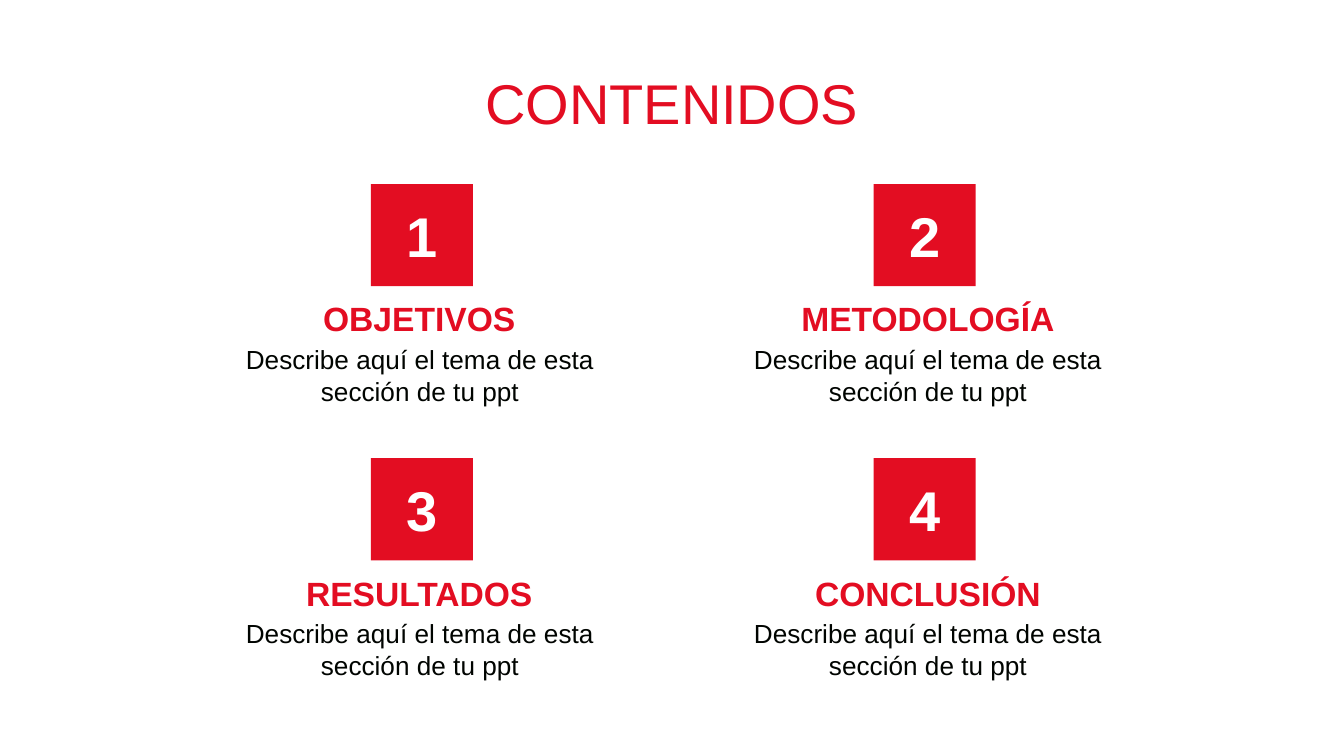
from pptx import Presentation
from pptx.dml.color import RGBColor
from pptx.enum.shapes import MSO_SHAPE
from pptx.enum.text import MSO_ANCHOR, PP_ALIGN
from pptx.util import Inches, Pt

RECT = MSO_SHAPE.RECTANGLE
MID, LOW = MSO_ANCHOR.MIDDLE, MSO_ANCHOR.BOTTOM
CENTER = PP_ALIGN.CENTER
HUES = {"red": "E30D22", "ink": "000400", "white": "FFFFFF"}

# Slide in 16:9
deck = Presentation()
deck.slide_width, deck.slide_height = Inches(10), Inches(10 * 9 / 16)
slide = deck.slides.add_slide(deck.slide_layouts[6])


def put(text, left, top, width, height, size=14, hue="ink", bold=False,
        fill=None, anchor=MID):
    """Add centred text in a box, or in a filled square if fill is given."""
    area = [Inches(v) for v in (left, top, width, height)]
    if fill:
        box = slide.shapes.add_shape(RECT, *area)
        box.shadow.inherit = False
        box.fill.solid()
        box.fill.fore_color.rgb = RGBColor.from_string(HUES[fill])
        box.line.fill.background()
    else:
        box = slide.shapes.add_textbox(*area)
    frame = box.text_frame
    frame.word_wrap = True
    frame.vertical_anchor = anchor
    frame.margin_left = frame.margin_right = Inches(0.1)
    frame.margin_top = frame.margin_bottom = Inches(0.1)
    para = frame.paragraphs[0]
    para.alignment = CENTER
    run = para.add_run()
    run.text = text
    font = run.font
    font.name, font.size, font.bold = "Arial", Pt(size), bold
    font.color.rgb = RGBColor.from_string(HUES[hue])


# Title
put("CONTENIDOS", 0.65, 0.36, 8.7, 0.75, size=30, hue="red", anchor=LOW)

# Grid: two columns and two rows of numbered topics
heads = ["OBJETIVOS", "METODOLOGÍA", "RESULTADOS", "CONCLUSIÓN"]
note = "Describe aquí el tema de esta sección de tu ppt"
cols = [1.56, 5.34]                  # left edge of the notes
tiles = [2.76, 6.5]                  # left edge of the number squares
spans = [(1.66, 2.92), (5.52, 2.77)]  # left edge and width of the heads
rows = [1.37, 3.41]                  # top edge of the number squares
side = 0.76

for i, head in enumerate(heads):
    row, col = divmod(i, 2)
    top = rows[row]
    left, width = spans[col]
    put(str(i + 1), tiles[col], top, side, side, size=30, hue="white",
        bold=True, fill="red")
    put(head, left, top + 0.79, width, 0.42, size=18, hue="red", bold=True)
    put(note, cols[col], top + 1.09, 3.13, 0.66)

deck.save("out.pptx")
